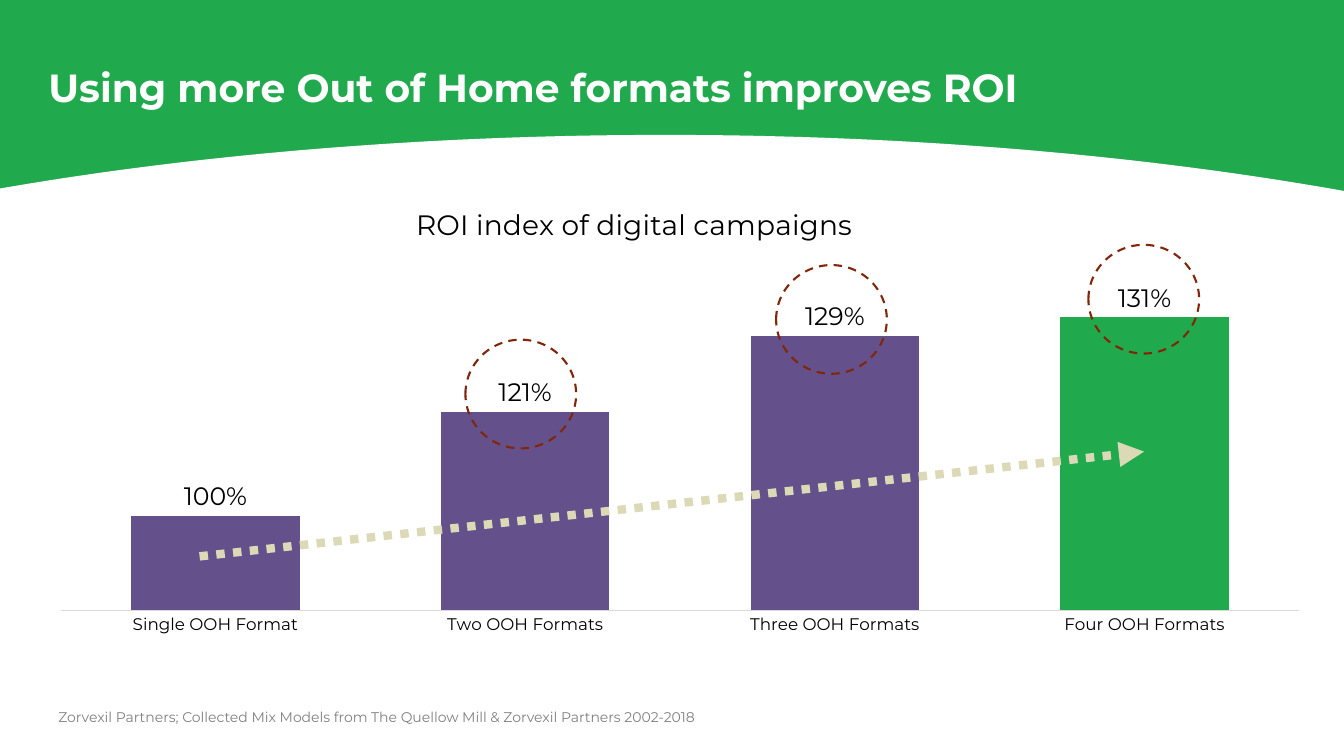
import lxml.etree
import pptx
import pptx.chart.data
import pptx.dml.color
import pptx.enum.chart
import pptx.enum.dml
import pptx.enum.shapes
import pptx.enum.text
import pptx.oxml
import pptx.oxml.ns
import pptx.util

Cm, Pt = pptx.util.Cm, pptx.util.Pt
qn = pptx.oxml.ns.qn
FONT = "Montserrat"
COLORS = {
    "green": "20AA4D", "purple": "64518C", "white": "FFFFFF", "black": "000000",
    "grey": "808080", "axis": "D9D9D9", "sand": "DCD9B6", "rust": "812609",
}


def color(name):
    return pptx.dml.color.RGBColor.from_string(COLORS[name])


def style(font, size, name, bold=False):
    font.name, font.size, font.bold = FONT, Pt(size), bold
    font.color.rgb = color(name)


deck = pptx.Presentation()
deck.slide_width, deck.slide_height = Cm(33.87), Cm(19.05)
page = deck.slides.add_slide(deck.slide_layouts[6])
page.background.fill.solid()
page.background.fill.fore_color.rgb = color("green")

# White area with an arched top, symmetric about its middle
middle, steps = 16.76, 40
curve = [(0, 3.4), (6.46, 3.4), (12.48, 3.96), (17.48, 4.88)]
arch = []
for step in range(steps + 1):
    t = step / steps
    weights = ((1 - t) ** 3, 3 * t * (1 - t) ** 2, 3 * t * t * (1 - t), t ** 3)
    arch.append([sum(w * point[axis] for w, point in zip(weights, curve)) for axis in (0, 1)])
outline = [(middle - x, y) for x, y in reversed(arch)] + [(middle + x, y) for x, y in arch[1:]]
outline += [(34.72, 4.98), (34.72, 19.05), (-0.79, 19.05), (-0.79, 4.88)]
points = [(Cm(x), Cm(y)) for x, y in outline]
builder = page.shapes.build_freeform(*points[0])
builder.add_line_segments(points[1:], close=True)
area = builder.convert_to_shape()
area.shadow.inherit = False
area.fill.solid()
area.fill.fore_color.rgb = color("white")
area.line.fill.background()

# Heading
box = page.shapes.add_textbox(Cm(1.22), Cm(0.28), Cm(26), Cm(2.49))
frame = box.text_frame
frame.word_wrap = True
frame.vertical_anchor = pptx.enum.text.MSO_ANCHOR.BOTTOM
frame.margin_left = frame.margin_right = frame.margin_top = frame.margin_bottom = 0
para = frame.paragraphs[0]
para.line_spacing = 1.1
span = para.add_run()
span.text = "Using more Out of Home formats improves ROI"
style(span.font, 28, "white", bold=True)

# Column chart: category, value, label, colour
columns = [
    ("Single OOH Format", 0.10, "100%", "purple"),
    ("Two OOH Formats", 0.21, "121%", "purple"),
    ("Three OOH Formats", 0.29, "129%", "purple"),
    ("Four OOH Formats", 0.31, "131%", "green"),
]
data = pptx.chart.data.CategoryChartData(number_format="0%")
data.categories = [column[0] for column in columns]
data.add_series("Series 1", [column[1] for column in columns])
chart = page.shapes.add_chart(
    pptx.enum.chart.XL_CHART_TYPE.COLUMN_CLUSTERED,
    Cm(0.76), Cm(4.67), Cm(32), Cm(11.81), data).chart
style(chart.font, 10, "black")
chart.has_legend = False

# Chart title and the placement of title and plot area
chart.has_title = True
span = chart.chart_title.text_frame.paragraphs[0].add_run()
span.text = "ROI index of digital campaigns"
style(span.font, 20, "black")
chart.chart_title.include_in_layout = False
plot_area = chart._chartSpace.chart.plotArea
placements = [
    (chart.chart_title._element, {"xMode": "edge", "yMode": "edge", "x": 0.3, "y": 0.03}),
    (plot_area, {"layoutTarget": "inner", "xMode": "edge", "yMode": "edge",
                 "x": 0.024, "y": 0.201, "w": 0.976, "h": 0.706}),
]
for parent, settings in placements:
    for old in parent.findall(qn("c:layout")):
        parent.remove(old)
    layout = lxml.etree.Element(qn("c:layout"))
    manual = lxml.etree.SubElement(layout, qn("c:manualLayout"))
    for key, value in settings.items():
        lxml.etree.SubElement(manual, qn("c:" + key)).set("val", str(value))
    parent.insert(0 if parent is plot_area else 1, layout)

# Axes
for axis in (chart.category_axis, chart.value_axis):
    axis.has_major_gridlines = False
    axis.major_tick_mark = axis.minor_tick_mark = pptx.enum.chart.XL_TICK_MARK.NONE
    style(axis.tick_labels.font, 12, "black")
chart.category_axis.format.line.color.rgb = color("axis")
chart.category_axis.format.line.width = Pt(0.75)
value_axis = chart.value_axis
value_axis.minimum_scale, value_axis.maximum_scale, value_axis.major_unit = 0, 0.35, 0.1
value_axis.tick_label_position = pptx.enum.chart.XL_TICK_LABEL_POSITION.NONE
value_axis.format.line.fill.background()

# Columns and their labels
plot = chart.plots[0]
plot.gap_width, plot.overlap, plot.vary_by_categories = 84, -46, False
series = plot.series[0]
outside = pptx.enum.chart.XL_LABEL_POSITION.OUTSIDE_END
for index, (_, _, text, fill) in enumerate(columns):
    point = series.points[index]
    point.format.fill.solid()
    point.format.fill.fore_color.rgb = color(fill)
    span = point.data_label.text_frame.paragraphs[0].add_run()
    span.text = text
    style(span.font, 18, "black")
    point.data_label.position = outside
labels = series.data_labels
labels.show_value, labels.position = True, outside
labels.number_format, labels.number_format_is_linked = "0%", False
style(labels.font, 18, "black")

# Footnote
box = page.shapes.add_textbox(Cm(1.22), Cm(17.73), Cm(30.89), Cm(0.69))
box.text_frame.word_wrap = True
span = box.text_frame.paragraphs[0].add_run()
span.text = "Zorvexil Partners; Collected Mix Models from The Quellow Mill & Zorvexil Partners 2002-2018"
style(span.font, 10, "grey")

# Dotted trend arrow
arrow = page.shapes.add_connector(
    pptx.enum.shapes.MSO_CONNECTOR.STRAIGHT, Cm(5.03), Cm(14.02), Cm(28.83), Cm(11.38))
arrow.line.color.rgb = color("sand")
arrow.line.width = Pt(6)
arrow.line.dash_style = pptx.enum.dml.MSO_LINE.ROUND_DOT
arrow.line._get_or_add_ln().find(qn("a:prstDash")).set("val", "sysDot")
lxml.etree.SubElement(arrow.line._get_or_add_ln(), qn("a:tailEnd")).set("type", "triangle")
lxml.etree.SubElement(arrow._element.spPr, qn("a:effectLst"))

# Dashed rings around the raised values
for left, top in [(11.73, 8.56), (19.56, 6.68), (27.43, 6.17)]:
    ring = page.shapes.add_shape(
        pptx.enum.shapes.MSO_SHAPE.OVAL, Cm(left), Cm(top), Cm(2.79), Cm(2.74))
    ring.shadow.inherit = False
    ring.fill.background()
    ring.line.color.rgb = color("rust")
    ring.line.width = Pt(1.5)
    ring.line.dash_style = pptx.enum.dml.MSO_LINE.DASH

deck.save("out.pptx")
